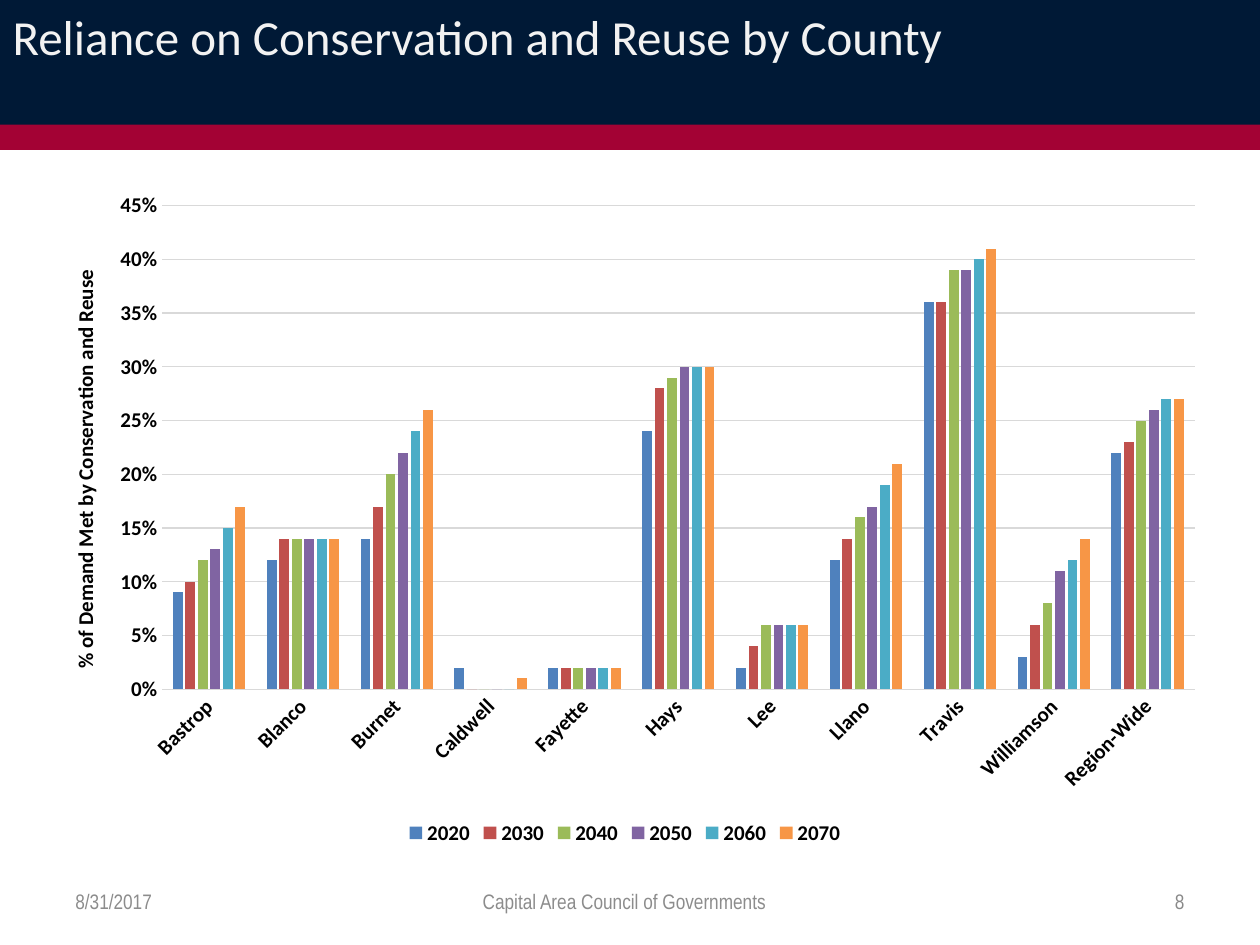
import pptx
import pptx.util
import pptx.oxml
import pptx.oxml.ns
import pptx.chart.data
import pptx.dml.color
import pptx.enum.chart
import pptx.enum.shapes
import pptx.enum.text

WIDE, HIGH = 10, 7.5
HUES = {"navy": "001936", "red": "A30234", "title": "F2F2F2", "text": "000000",
        "grid": "D9D9D9", "foot": "8C8C8C", "page": "898989"}
ALIGN = pptx.enum.text.PP_ALIGN
ANCHOR = pptx.enum.text.MSO_ANCHOR
NAMES = ["Bastrop", "Blanco", "Burnet", "Caldwell", "Fayette", "Hays", "Lee",
         "Llano", "Travis", "Williamson", "Region-Wide"]
# Each year has its colour and the percent of demand for each county.
YEARS = {
    "2020": ("4F81BD", [9, 12, 14, 2, 2, 24, 2, 12, 36, 3, 22]),
    "2030": ("C0504D", [10, 14, 17, 0, 2, 28, 4, 14, 36, 6, 23]),
    "2040": ("9BBB59", [12, 14, 20, 0, 2, 29, 6, 16, 39, 8, 25]),
    "2050": ("8064A2", [13, 14, 22, 0, 2, 30, 6, 17, 39, 11, 26]),
    "2060": ("4BACC6", [15, 14, 24, 0, 2, 30, 6, 19, 40, 12, 27]),
    "2070": ("F79646", [17, 14, 26, 1, 2, 30, 6, 21, 41, 14, 27]),
}


def rgb(hue):
    return pptx.dml.color.RGBColor.from_string(hue)


def inch(box):
    return [pptx.util.Inches(side) for side in box]


def style(font, size=12, hue=HUES["text"], bold=True, face="Calibri"):
    font.name, font.size, font.bold = face, pptx.util.Pt(size), bold
    font.color.rgb = rgb(hue)


def write(frame, text, align=ALIGN.LEFT, anchor=ANCHOR.MIDDLE, **form):
    frame.word_wrap = True
    frame.auto_size = pptx.enum.text.MSO_AUTO_SIZE.NONE
    frame.vertical_anchor = anchor
    para = frame.paragraphs[0]
    para.alignment = align
    run = para.add_run()
    run.text = text
    style(run.font, **form)


def add_band(slide, box, hue):
    band = slide.shapes.add_shape(pptx.enum.shapes.MSO_SHAPE.RECTANGLE, *inch(box))
    band.shadow.inherit = False
    band.fill.solid()
    band.fill.fore_color.rgb = rgb(hue)
    band.line.fill.background()


def add_head(slide, box):
    left, top, width, height = box
    add_band(slide, box, HUES["navy"])
    add_band(slide, (left, top + 0.99 * height, width, height / 5), HUES["red"])
    title = slide.shapes.title
    title.left, title.top, title.width, title.height = inch(
        (left, top, 0.85 * width, height))
    write(title.text_frame, "Reliance on Conservation and Reuse by County",
          anchor=ANCHOR.TOP, size=28, hue=HUES["title"], bold=False)
    slide.shapes._spTree.append(title._element)


def pin(node, index, **marks):
    """Fix the place of a chart part, in shares of the chart."""
    for old in node.xpath("./c:layout"):
        node.remove(old)
    tags = "".join(f'<c:{tag} val="{mark}"/>' for tag, mark in marks.items())
    node.insert(index, pptx.oxml.parse_xml(
        f'<c:layout {pptx.oxml.ns.nsdecls("c")}>'
        f"<c:manualLayout>{tags}</c:manualLayout></c:layout>"))


def style_axes(chart):
    cat, val = chart.category_axis, chart.value_axis
    for axis in (cat, val):
        axis.major_tick_mark = pptx.enum.chart.XL_TICK_MARK.NONE
        axis.minor_tick_mark = pptx.enum.chart.XL_TICK_MARK.NONE
        style(axis.tick_labels.font)
    cat._element.xpath("./c:txPr/a:bodyPr")[0].set("rot", str(-45 * 60000))
    val.minimum_scale, val.maximum_scale, val.major_unit = 0, 0.45, 0.05
    val.tick_labels.number_format = "0%"
    val.tick_labels.number_format_is_linked = False
    val.format.line.fill.background()
    for line in (cat.format.line, val.major_gridlines.format.line):
        line.color.rgb = rgb(HUES["grid"])
        line.width = pptx.util.Pt(0.75)
    write(val.axis_title.text_frame, "% of Demand Met by Conservation and Reuse",
          align=ALIGN.CENTER)
    pin(val.axis_title._element, 1, xMode="edge", yMode="edge", x=0.03, y=0.13)


def add_bars(slide, box):
    data = pptx.chart.data.CategoryChartData(number_format="0%")
    data.categories = NAMES
    for year, (_, shares) in YEARS.items():
        data.add_series(year, [share / 100 for share in shares])
    kind = pptx.enum.chart.XL_CHART_TYPE.COLUMN_CLUSTERED
    chart = slide.shapes.add_chart(kind, *inch(box), data).chart
    style(chart.font, size=10, bold=False)
    chart.has_title = False
    plot = chart.plots[0]
    plot.gap_width, plot.overlap, plot.vary_by_categories = 219, -27, False
    for bars, (hue, _) in zip(plot.series, YEARS.values()):
        bars.format.fill.solid()
        bars.format.fill.fore_color.rgb = rgb(hue)
        bars.invert_if_negative = False
    style_axes(chart)
    pin(chart._chartSpace.xpath("./c:chart/c:plotArea")[0], 0, layoutTarget="inner",
        xMode="edge", yMode="edge", x=0.11, y=0.04, w=0.87, h=0.72)
    chart.has_legend = True
    chart.legend.position = pptx.enum.chart.XL_LEGEND_POSITION.BOTTOM
    chart.legend.include_in_layout = False
    style(chart.legend.font)


def add_foot(slide, box):
    left, top, width, height = box
    parts = [("8/31/2017", 0, 0.26, ALIGN.LEFT, "foot"),
             ("Capital Area Council of Governments", 0.32, 0.35, ALIGN.CENTER, "foot"),
             ("8", 0.74, 0.26, ALIGN.RIGHT, "page")]
    for text, start, share, align, hue in parts:
        spot = (left + start * width, top, share * width, height)
        label = slide.shapes.add_textbox(*inch(spot))
        write(label.text_frame, text, align=align, hue=HUES[hue], bold=False,
              face="Arial Narrow")


def main():
    deck = pptx.Presentation()
    deck.slide_width, deck.slide_height = inch((WIDE, HIGH))
    slide = deck.slides.add_slide(deck.slide_layouts[5])
    add_head(slide, (0, 0, WIDE, 1))
    add_bars(slide, (0.25, 1.42, 9.42, 5.33))
    add_foot(slide, (0.5, 6.95, WIDE - 1, 0.4))
    deck.save("out.pptx")


if __name__ == "__main__":
    main()
